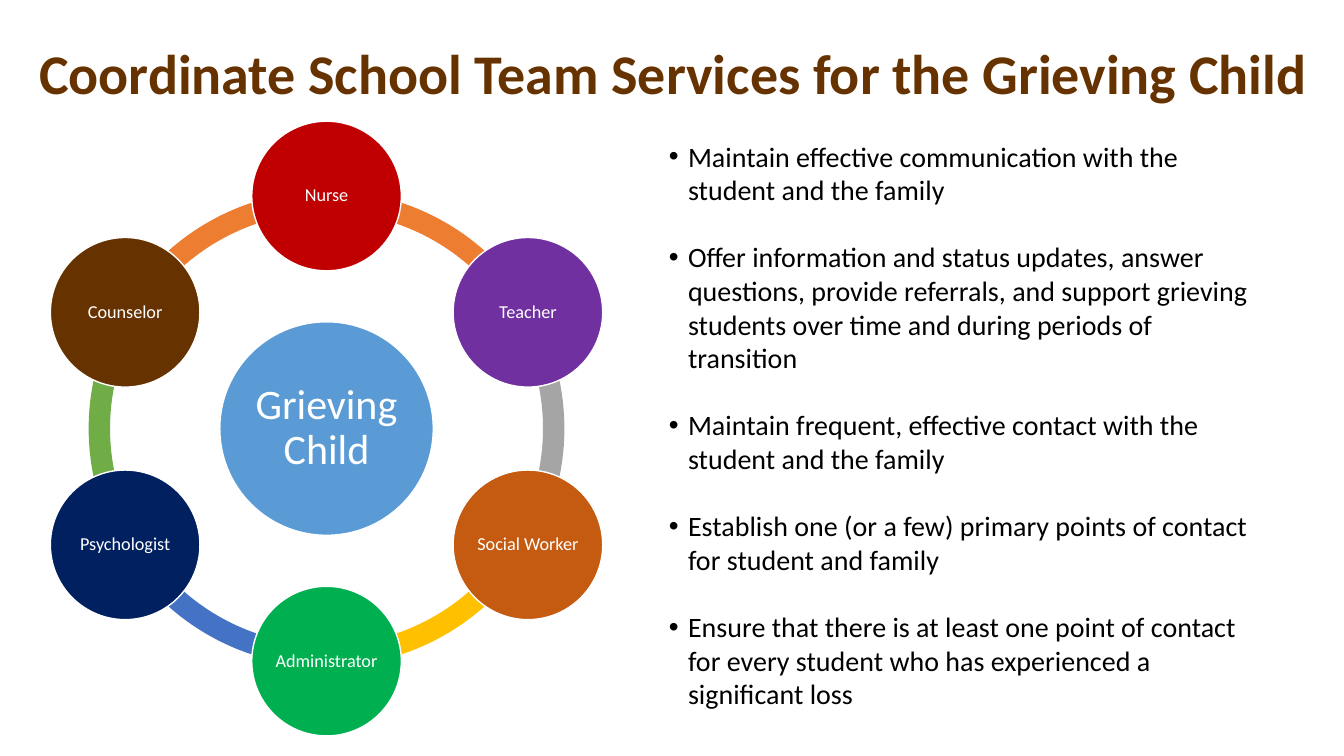
"""Build the slide on coordinating school services for a grieving child."""
from math import cos, radians, sin

from lxml import etree
from pptx import Presentation
from pptx.dml.color import RGBColor
from pptx.enum.shapes import MSO_SHAPE
from pptx.enum.text import MSO_ANCHOR, PP_ALIGN
from pptx.oxml.ns import qn
from pptx.util import Cm, Pt

OVAL, BLOCK_ARC = MSO_SHAPE.OVAL, MSO_SHAPE.BLOCK_ARC
TOP, MIDDLE = MSO_ANCHOR.TOP, MSO_ANCHOR.MIDDLE
LEFT, CENTER = PP_ALIGN.LEFT, PP_ALIGN.CENTER

BLACK = RGBColor(0x00, 0x00, 0x00)
WHITE = RGBColor(0xFF, 0xFF, 0xFF)
BROWN = RGBColor(0x66, 0x33, 0x00)
RED = RGBColor(0xC0, 0x00, 0x00)
PURPLE = RGBColor(0x70, 0x30, 0xA0)
RUST = RGBColor(0xC5, 0x5A, 0x11)
GREEN = RGBColor(0x00, 0xB0, 0x50)
NAVY = RGBColor(0x00, 0x20, 0x60)
ORANGE = RGBColor(0xED, 0x7D, 0x31)
GRAY = RGBColor(0xA5, 0xA5, 0xA5)
GOLD = RGBColor(0xFF, 0xC0, 0x00)
BLUE = RGBColor(0x44, 0x72, 0xC4)
LEAF = RGBColor(0x70, 0xAD, 0x47)
SKY = RGBColor(0x5B, 0x9B, 0xD5)

CENTER_X, CENTER_Y = 8.23, 10.8
ORBIT_RADIUS = 5.86
RING_DIAMETER, CHILD_DIAMETER, MEMBER_DIAMETER = 11.99, 5.38, 3.77
ARC_THICKNESS = 0.045
ANGLE_UNIT = 0.6

TEAM = [
    ("Nurse", RED, ORANGE),
    ("Teacher", PURPLE, GRAY),
    ("Social Worker", RUST, GOLD),
    ("Administrator", GREEN, BLUE),
    ("Psychologist", NAVY, LEAF),
    ("Counselor", BROWN, ORANGE),
]
ACTIONS = [
    "Maintain effective communication with the student and the family",
    "Offer information and status updates, answer questions, provide referrals, "
    "and support grieving students over time and during periods of transition",
    "Maintain frequent, effective contact with the student and the family",
    "Establish one (or a few) primary points of contact for student and family",
    "Ensure that there is at least one point of contact for every student "
    "who has experienced a significant loss",
]


def write_text(frame, *texts, font, size, color, bold=False, align=LEFT,
               anchor=TOP, line_spacing=0.9, space_after=0, bullet_indent=None):
    frame.word_wrap = True
    frame.vertical_anchor = anchor
    for index, text in enumerate(texts):
        paragraph = frame.add_paragraph() if index else frame.paragraphs[0]
        paragraph.alignment = align
        paragraph.line_spacing = line_spacing
        paragraph.space_after = Pt(space_after)
        run = paragraph.add_run()
        run.text = text
        run.font.name = font
        run.font.size = Pt(size)
        run.font.bold = bold
        run.font.color.rgb = color
        if bullet_indent:
            properties = paragraph._p.get_or_add_pPr()
            properties.set("marL", str(Cm(bullet_indent)))
            properties.set("indent", str(-Cm(bullet_indent)))
            etree.SubElement(properties, qn("a:buFont"), typeface="Arial")
            etree.SubElement(properties, qn("a:buChar"), char="•")


class TeamSlide:
    def __init__(self, slide, font="Calibri"):
        self.slide = slide
        self.font = font

    def text_box(self, left, top, width, height, *texts, **text_format):
        box = self.slide.shapes.add_textbox(Cm(left), Cm(top), Cm(width), Cm(height))
        write_text(box.text_frame, *texts, font=self.font, **text_format)

    def round_shape(self, kind, center_x, center_y, diameter, color):
        shape = self.slide.shapes.add_shape(
            kind, Cm(center_x - diameter / 2), Cm(center_y - diameter / 2),
            Cm(diameter), Cm(diameter))
        shape.shadow.inherit = False
        shape.fill.solid()
        shape.fill.fore_color.rgb = color
        return shape

    def arc(self, start, end, color):
        shape = self.round_shape(BLOCK_ARC, CENTER_X, CENTER_Y, RING_DIAMETER, color)
        shape.line.fill.background()
        shape.adjustments[0] = start % 360 * ANGLE_UNIT
        shape.adjustments[1] = end % 360 * ANGLE_UNIT
        shape.adjustments[2] = ARC_THICKNESS

    def circle(self, center_x, center_y, diameter, color, text, size):
        shape = self.round_shape(OVAL, center_x, center_y, diameter, color)
        shape.line.color.rgb = WHITE
        shape.line.width = Pt(1)
        frame = shape.text_frame
        frame.margin_left = frame.margin_right = Cm(0)
        frame.margin_top = frame.margin_bottom = Cm(0)
        write_text(frame, text, font=self.font, size=size, color=WHITE,
                   align=CENTER, anchor=MIDDLE)


def main():
    presentation = Presentation()
    presentation.slide_width, presentation.slide_height = Cm(33.87), Cm(19.05)
    team_slide = TeamSlide(presentation.slides.add_slide(presentation.slide_layouts[6]))

    team_slide.text_box(0.74, 0.08, 32.84, 3.68,
                        "Coordinate School Team Services for the Grieving Child",
                        size=40, color=BROWN, bold=True, anchor=MIDDLE)

    step = 360 / len(TEAM)
    angles = [270 + step * index for index in range(len(TEAM))]
    for angle, (_, _, arc_color) in zip(angles, TEAM):
        team_slide.arc(angle, angle + step, arc_color)
    team_slide.circle(CENTER_X, CENTER_Y, CHILD_DIAMETER, SKY, "Grieving Child", 30)
    for angle, (role, color, _) in zip(angles, TEAM):
        team_slide.circle(CENTER_X + ORBIT_RADIUS * cos(radians(angle)),
                          CENTER_Y + ORBIT_RADIUS * sin(radians(angle)),
                          MEMBER_DIAMETER, color, role, 13)

    team_slide.text_box(16.61, 3.38, 15.14, 14.78, *ACTIONS, size=20, color=BLACK,
                        line_spacing=1.0, space_after=24, bullet_indent=0.48)
    presentation.save("out.pptx")


if __name__ == "__main__":
    main()
